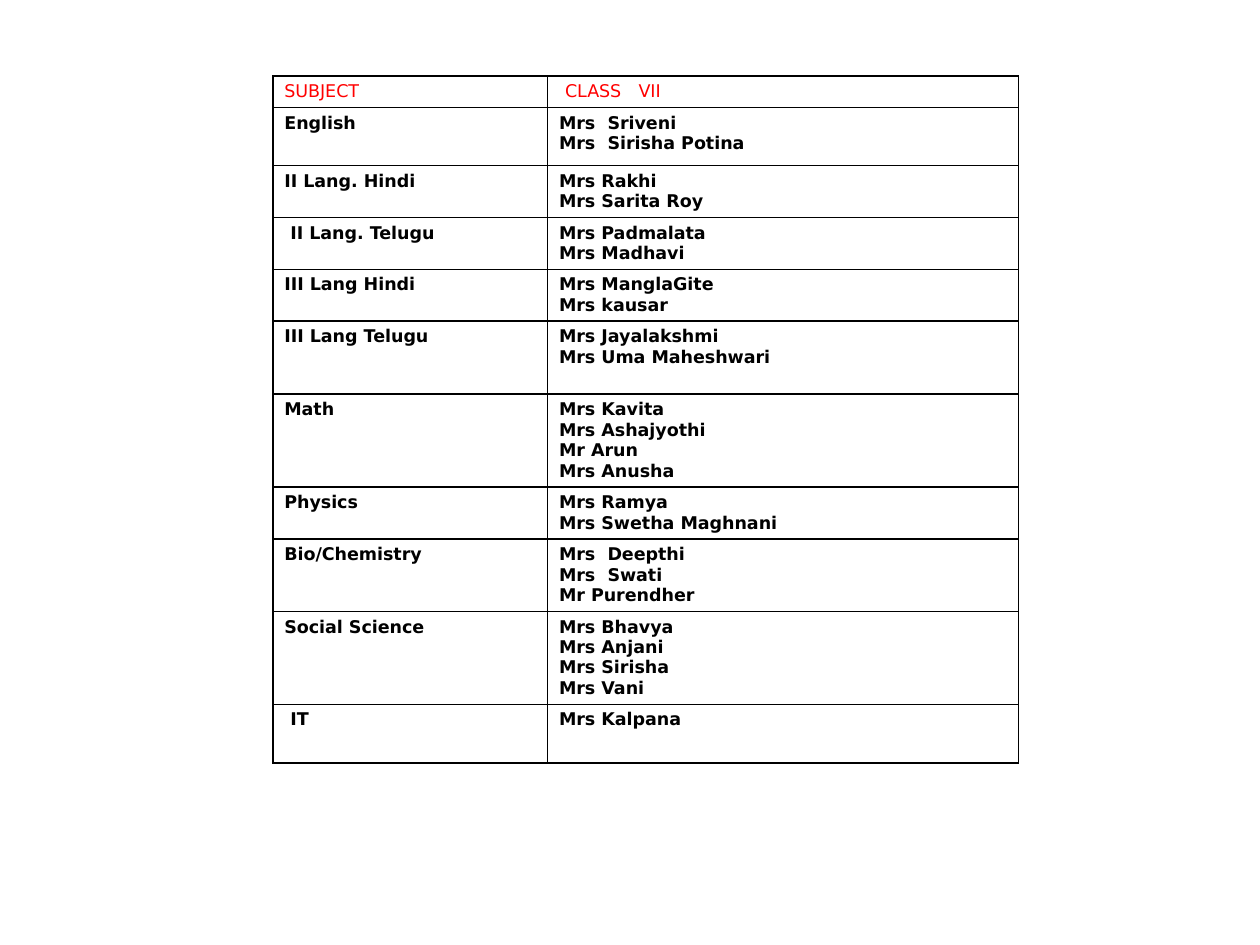
from lxml import etree
from pptx import Presentation
from pptx.dml.color import RGBColor
from pptx.oxml.ns import qn
from pptx.util import Pt

FONT = "DejaVu Sans"
COLORS = {"head": "FF0000", "text": "000000", "line": "000000"}
COLS = (157, 269)
PAD = 6.5
NUDGE = 3.4
HEAD_TAB = 42
NAME_TAB = 27.7
ROWS = [
    (18, "SUBJECT", ["CLASS\tVII"]),
    (33.1, "English", ["Mrs\tSriveni", "Mrs\tSirisha Potina"]),
    (29.7, "II Lang. Hindi", ["Mrs Rakhi", "Mrs Sarita Roy"]),
    (29.7, "II Lang. Telugu", ["Mrs Padmalata", "Mrs Madhavi"]),
    (29.7, "III Lang Hindi", ["Mrs ManglaGite", "Mrs kausar"]),
    (41.7, "III Lang Telugu", ["Mrs Jayalakshmi", "Mrs Uma Maheshwari"]),
    (53.1, "Math", ["Mrs Kavita", "Mrs Ashajyothi", "Mr Arun", "Mrs Anusha"]),
    (29.7, "Physics", ["Mrs Ramya", "Mrs Swetha Maghnani"]),
    (41.1, "Bio/Chemistry", ["Mrs\tDeepthi", "Mrs\tSwati", "Mr Purendher"]),
    (53.1, "Social Science",
     ["Mrs Bhavya", "Mrs Anjani", "Mrs Sirisha", "Mrs Vani"]),
    (33.7, "IT", ["Mrs Kalpana"]),
]
INSET = {"CLASS\tVII", "II Lang. Telugu", "IT"}


def write(para, text, size=10, color="text", bold=False, tab=NAME_TAB):
    """Fill a paragraph with formatted text, with a tab stop if it has a tab."""
    if "\t" in text:
        stops = etree.SubElement(para._p.get_or_add_pPr(), qn("a:tabLst"))
        etree.SubElement(stops, qn("a:tab"), pos=str(Pt(tab)), algn="l")
    run = para.add_run()
    run.text = text
    font = run.font
    font.name, font.size, font.bold = FONT, Pt(size), bold
    font.color.rgb = RGBColor.from_string(COLORS[color])


def frame(cell):
    """Draw all four borders of a cell and clear its fill."""
    props = cell._tc.get_or_add_tcPr()
    for side in ("lnL", "lnR", "lnT", "lnB"):
        line = etree.SubElement(props, qn("a:" + side), w=str(Pt(1)))
        fill = etree.SubElement(line, qn("a:solidFill"))
        etree.SubElement(fill, qn("a:srgbClr"), val=COLORS["line"])
    cell.fill.background()


def fill_cell(cell, lines, **style):
    """Set the margins, borders and lines of text of a cell."""
    inset = NUDGE if lines[0] in INSET else 0
    cell.margin_left, cell.margin_right = Pt(PAD + inset), Pt(PAD)
    cell.margin_top = cell.margin_bottom = Pt(3.2)
    frame(cell)
    body = cell.text_frame
    for i, text in enumerate(lines):
        para = body.add_paragraph() if i else body.paragraphs[0]
        write(para, text, **style)


def add_staff(slide, left, top, width, height):
    """Place the table of subjects and teachers in the given box."""
    table = slide.shapes.add_table(
        len(ROWS), len(COLS), Pt(left), Pt(top), Pt(width), Pt(height)).table
    table.first_row = table.horz_banding = False
    for col, share in zip(table.columns, COLS):
        col.width = Pt(width * share / sum(COLS))
    total = sum(row[0] for row in ROWS)
    for i, (tall, topic, names) in enumerate(ROWS):
        table.rows[i].height = Pt(height * tall / total)
        style = {"bold": True} if i else {"color": "head", "tab": HEAD_TAB}
        fill_cell(table.cell(i, 0), [topic], **style)
        fill_cell(table.cell(i, 1), names, **style)


def main():
    """Build and save the slide."""
    deck = Presentation()
    deck.slide_width, deck.slide_height = Pt(720), Pt(540)
    slide = deck.slides.add_slide(deck.slide_layouts[6])
    add_staff(slide, 156, 43.4, 426, 392.6)
    deck.save("out.pptx")


if __name__ == "__main__":
    main()
